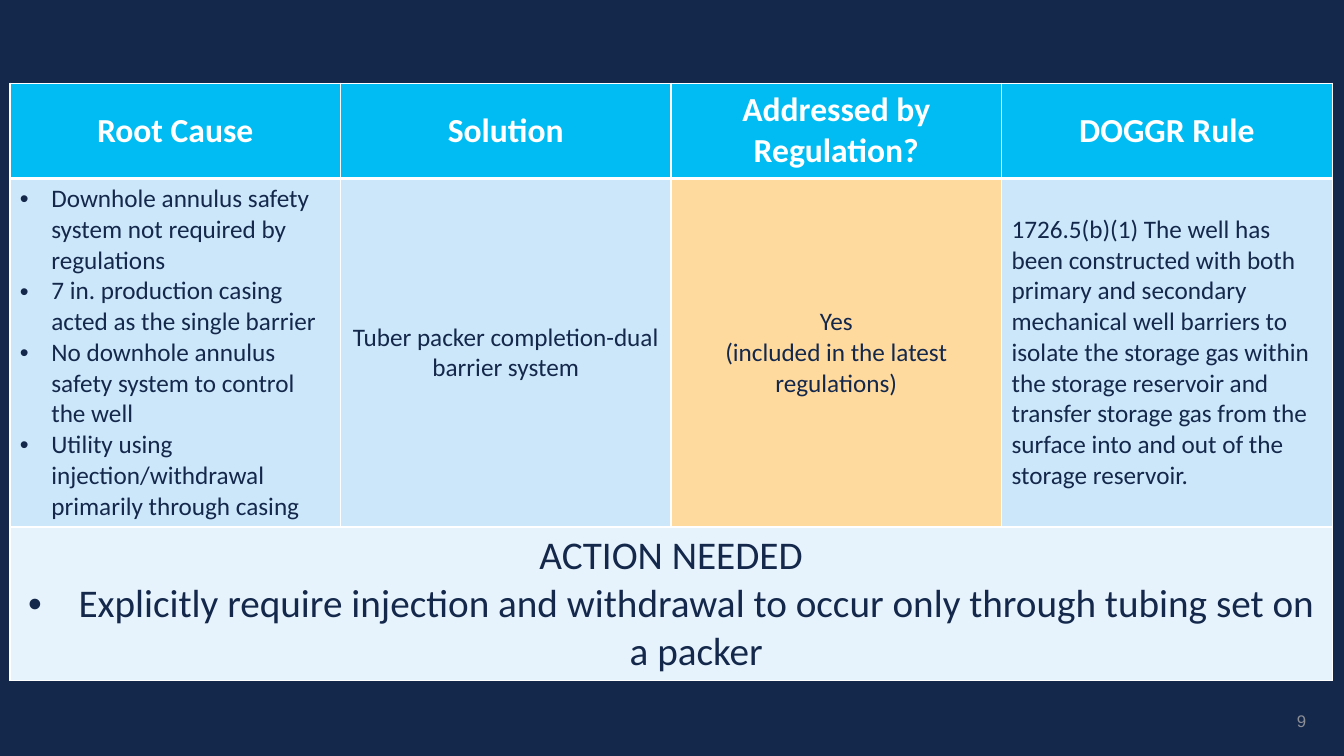
from dataclasses import dataclass

from lxml.etree import SubElement
from pptx import Presentation
from pptx.dml.color import RGBColor
from pptx.enum.text import MSO_ANCHOR as Anchor, PP_ALIGN as Align
from pptx.oxml.ns import qn
from pptx.util import Cm, Pt


@dataclass(frozen=True)
class Theme:
    """Colours, fonts and type sizes of the slide."""
    navy: str = "14284B"
    white: str = "FFFFFF"
    header: str = "00BCF2"
    body: str = "CCE7FA"
    highlight: str = "FFDA9F"
    action: str = "E7F3FC"
    muted: str = "8C8E96"
    font: str = "Calibri"
    number_font: str = "Arial"
    header_size: int = 24
    body_size: int = 18
    action_size: int = 28
    number_size: int = 12


THEME = Theme()
HEADINGS = ["Root Cause", "Solution", "Addressed by Regulation?", "DOGGR Rule"]
CAUSES = [
    "Downhole annulus safety system not required by regulations",
    "7 in. production casing acted as the single barrier",
    "No downhole annulus safety system to control the well",
    "Utility using injection/withdrawal primarily through casing",
]
SOLUTION = ["Tuber packer completion-dual barrier system"]
ADDRESSED = ["Yes", "(included in the latest regulations)"]
RULE = [
    "1726.5(b)(1) The well has been constructed with both primary and secondary "
    "mechanical well barriers to isolate the storage gas within the storage "
    "reservoir and transfer storage gas from the surface into and out of the "
    "storage reservoir."
]
ACTION_TITLE = "ACTION NEEDED"
ACTION = "Explicitly require injection and withdrawal to occur only through tubing set on a packer"
ROW_HEIGHTS = [2.4, 8.78, 3.86]


def write(paragraph, text, size, color, align, bold=False, font=THEME.font):
    """Add one formatted run to a paragraph."""
    paragraph.alignment = align
    run = paragraph.add_run()
    run.text = text
    run.font.name = font
    run.font.size = Pt(size)
    run.font.bold = bold
    run.font.color.rgb = RGBColor.from_string(color)


def add_bullet(paragraph, indent):
    """Give a paragraph a round bullet with a hanging indent in centimetres."""
    properties = paragraph._p.get_or_add_pPr()
    properties.set("marL", str(Cm(indent)))
    properties.set("indent", str(-Cm(indent)))
    SubElement(properties, qn("a:buFont"), typeface="Arial")
    SubElement(properties, qn("a:buChar"), char="•")


def style_cell(cell, fill, bottom=1):
    """Set the white borders, the fill and the anchor of a cell."""
    properties = cell._tc.get_or_add_tcPr()
    for side, width in (("lnL", 1), ("lnR", 1), ("lnT", 1), ("lnB", bottom)):
        line = SubElement(properties, qn(f"a:{side}"), w=str(Pt(width)))
        solid = SubElement(line, qn("a:solidFill"))
        SubElement(solid, qn("a:srgbClr"), val=THEME.white)
    cell.fill.solid()
    cell.fill.fore_color.rgb = RGBColor.from_string(fill)
    cell.vertical_anchor = Anchor.MIDDLE


def fill_cell(cell, lines, size, color, align, bold=False, bullet=None):
    """Write each line as a paragraph, bulleted when an indent is given."""
    frame = cell.text_frame
    for index, text in enumerate(lines):
        paragraph = frame.add_paragraph() if index else frame.paragraphs[0]
        write(paragraph, text, size, color, align, bold)
        if bullet:
            add_bullet(paragraph, bullet)


def add_findings_table(slide, left, top, width):
    """Place the table of causes, solutions, rules and the needed action."""
    columns = len(HEADINGS)
    shape = slide.shapes.add_table(
        len(ROW_HEIGHTS), columns, Cm(left), Cm(top), Cm(width), Cm(sum(ROW_HEIGHTS)))
    table = shape.table
    for row, height in zip(table.rows, ROW_HEIGHTS):
        row.height = Cm(height)

    body = [
        (CAUSES, THEME.body, Align.LEFT, 0.79),
        (SOLUTION, THEME.body, Align.CENTER, None),
        (ADDRESSED, THEME.highlight, Align.CENTER, None),
        (RULE, THEME.body, Align.LEFT, None),
    ]
    for column, (heading, (lines, fill, align, bullet)) in enumerate(zip(HEADINGS, body)):
        table.columns[column].width = Cm(width / columns)
        header_cell, body_cell, action_cell = (
            table.cell(row, column) for row in range(len(ROW_HEIGHTS)))
        style_cell(header_cell, THEME.header, bottom=3)
        fill_cell(header_cell, [heading], THEME.header_size, THEME.white, Align.CENTER, bold=True)
        style_cell(body_cell, fill)
        fill_cell(body_cell, lines, THEME.body_size, THEME.navy, align, bullet=bullet)
        style_cell(action_cell, THEME.action)

    action = table.cell(2, 0)
    action.merge(table.cell(2, columns - 1))
    fill_cell(action, [ACTION_TITLE, ACTION], THEME.action_size, THEME.navy, Align.CENTER)
    add_bullet(action.text_frame.paragraphs[1], 1.27)


def add_page_number(slide, left, top, width, height):
    """Place the page number at the right of its box."""
    frame = slide.shapes.add_textbox(Cm(left), Cm(top), Cm(width), Cm(height)).text_frame
    frame.word_wrap = True
    frame.vertical_anchor = Anchor.MIDDLE
    write(frame.paragraphs[0], "9", THEME.number_size, THEME.muted, Align.RIGHT,
          font=THEME.number_font)


def main():
    """Build and save the slide."""
    presentation = Presentation()
    presentation.slide_width = Cm(33.87)
    presentation.slide_height = Cm(19.05)
    slide = presentation.slides.add_slide(presentation.slide_layouts[6])
    slide.background.fill.solid()
    slide.background.fill.fore_color.rgb = RGBColor.from_string(THEME.navy)
    add_findings_table(slide, 0.25, 2.1, 33.32)
    add_page_number(slide, 31.7, 17.65, 1.47, 1.02)
    presentation.save("out.pptx")


if __name__ == "__main__":
    main()
